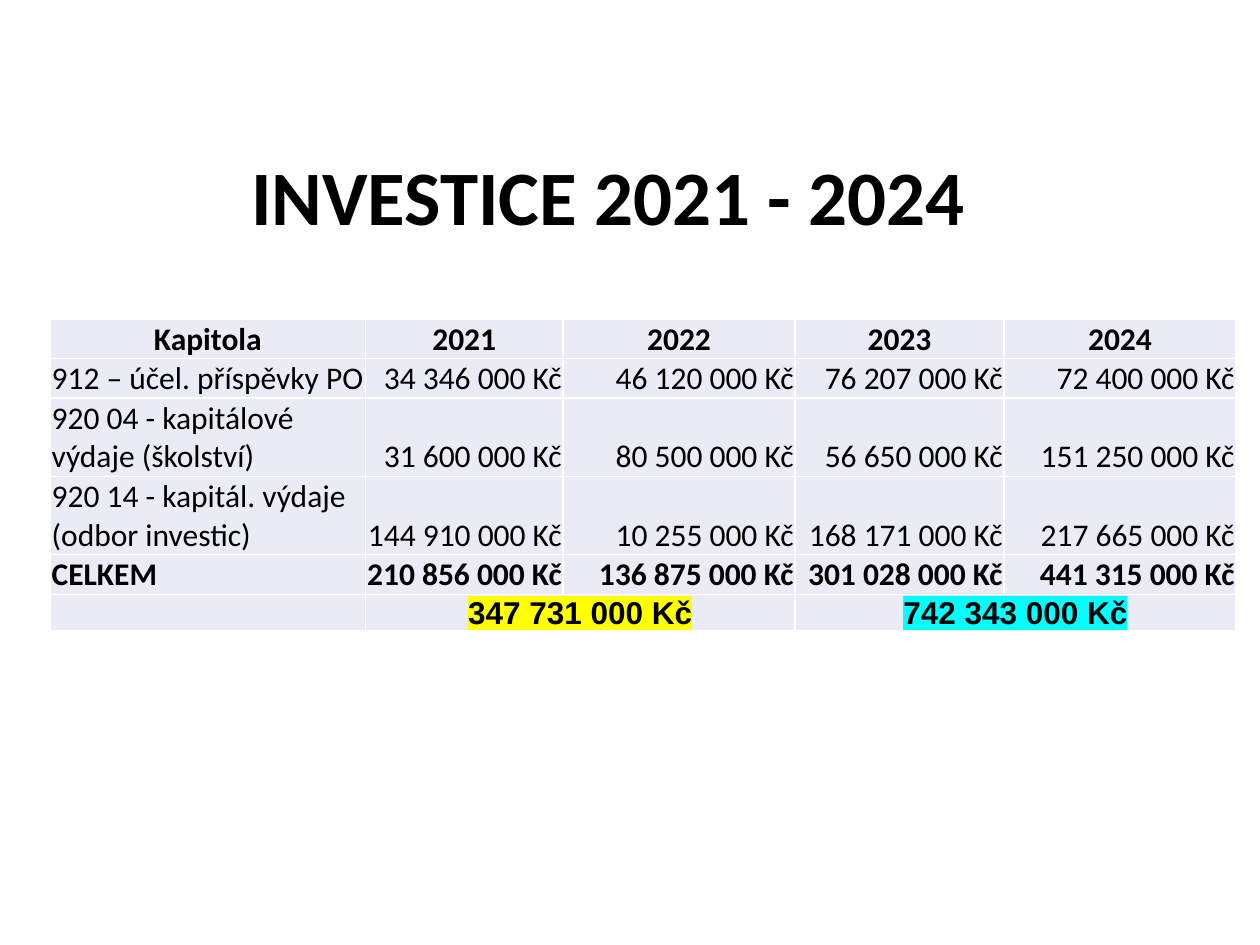
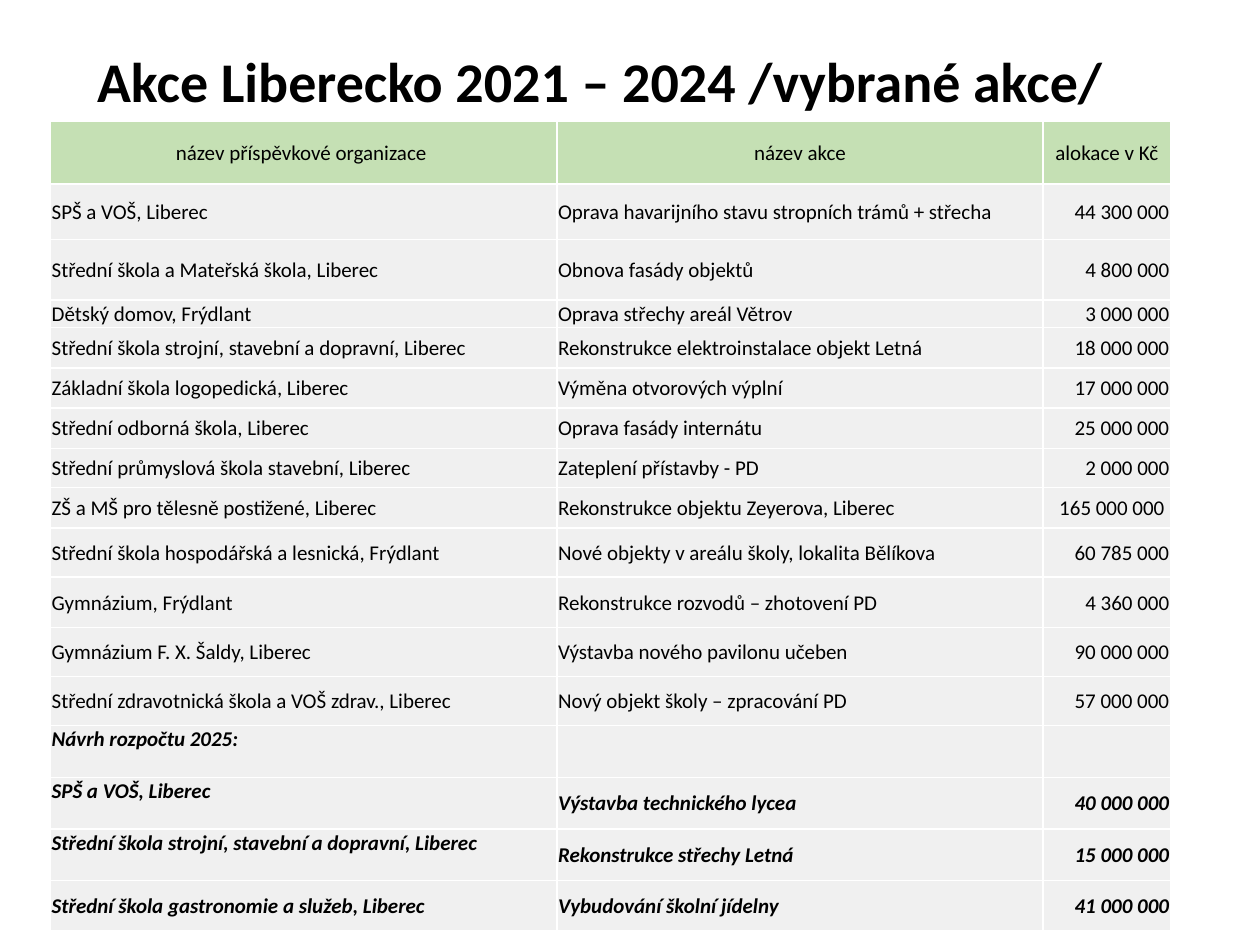
from lxml import etree
from pptx import Presentation
from pptx.dml.color import RGBColor
from pptx.enum.text import MSO_ANCHOR, MSO_AUTO_SIZE, PP_ALIGN
from pptx.oxml.ns import qn
from pptx.util import Inches, Pt

LEFT, CENTER, RIGHT = PP_ALIGN.LEFT, PP_ALIGN.CENTER, PP_ALIGN.RIGHT
TOP, MIDDLE, BOTTOM = MSO_ANCHOR.TOP, MSO_ANCHOR.MIDDLE, MSO_ANCHOR.BOTTOM
NO_AUTOFIT = MSO_AUTO_SIZE.NONE

BLACK, WHITE = "000000", "FFFFFF"
LAVENDER, GREEN, GREY = "E9EBF5", "C5E0B4", "F0F0F0"
YELLOW, CYAN = "FFFF00", "00FFFF"
FONT, SUM_FONT = "Calibri", "Arial"

YEAR_COLS = [2.5, 1.57, 1.84, 1.66, 1.84]
YEAR_ROWS = [0.31, 0.31, 0.62, 0.62, 0.31, 0.28]
INVESTMENTS = [
    ["Kapitola", "2021", "2022", "2023", "2024"],
    ["912 – účel. příspěvky PO", "34 346 000 Kč", "46 120 000 Kč", "76 207 000 Kč", "72 400 000 Kč"],
    ["920 04 - kapitálové výdaje (školství)", "31 600 000 Kč", "80 500 000 Kč", "56 650 000 Kč", "151 250 000 Kč"],
    ["920 14 - kapitál. výdaje (odbor investic)", "144 910 000 Kč", "10 255 000 Kč", "168 171 000 Kč", "217 665 000 Kč"],
    ["CELKEM", "210 856 000 Kč", "136 875 000 Kč", "301 028 000 Kč", "441 315 000 Kč"],
    ["", "", "", "", ""],
]
PERIOD_SUMS = [(1, "347 731 000 Kč", YELLOW), (3, "742 343 000 Kč", CYAN)]

PROJECT_COLS = [4.02, 3.86, 1.01]
PROJECT_ROWS = [0.5, 0.44, 0.48, 0.22, 0.32, 0.32, 0.32, 0.31, 0.32]
PROJECTS = [
    ["název příspěvkové organizace ", "název akce", "alokace v Kč"],
    ["SPŠ a VOŠ, Liberec", "Oprava havarijního stavu stropních trámů + střecha", "44 300 000"],
    ["Střední škola a Mateřská škola, Liberec", "Obnova fasády objektů", "4 800 000"],
    ["Dětský domov, Frýdlant", "Oprava střechy areál Větrov", "3 000 000"],
    ["Střední škola strojní, stavební a dopravní, Liberec", "Rekonstrukce elektroinstalace objekt Letná", "18 000 000"],
    ["Základní škola logopedická, Liberec", "Výměna otvorových výplní", "17 000 000"],
    ["Střední odborná škola, Liberec", "Oprava fasády internátu", "25 000 000"],
    ["Střední průmyslová škola stavební, Liberec", "Zateplení přístavby - PD", "2 000 000"],
    ["ZŠ a MŠ pro tělesně postižené, Liberec", "Rekonstrukce objektu Zeyerova, Liberec", "165 000 000 "],
]
LATER_ROWS = [0.39, 0.4, 0.39, 0.39, 0.41, 0.41, 0.41, 0.4]
LATER_PROJECTS = [
    ["Střední škola hospodářská a lesnická, Frýdlant", "Nové objekty v areálu školy, lokalita Bělíkova", "60 785 000"],
    ["Gymnázium, Frýdlant", "Rekonstrukce rozvodů – zhotovení PD", "4 360 000"],
    ["Gymnázium F. X. Šaldy, Liberec", "Výstavba nového pavilonu učeben", "90 000 000"],
    ["Střední zdravotnická škola a VOŠ zdrav., Liberec", "Nový objekt školy – zpracování PD", "57 000 000"],
    ["Návrh rozpočtu 2025:", "", ""],
    ["SPŠ a VOŠ, Liberec", "Výstavba technického lycea", "40 000 000"],
    ["Střední škola strojní, stavební a dopravní, Liberec", "Rekonstrukce střechy Letná", "15 000 000"],
    ["Střední škola gastronomie a služeb, Liberec", "Vybudování školní jídelny", "41 000 000"],
]


def rgb(value):
    """Return the colour for a hex string."""
    return RGBColor.from_string(value)


def style_run(r, size, bold=False, italic=False, font=FONT):
    """Format one run in black."""
    r.font.size, r.font.name = Pt(size), font
    r.font.bold, r.font.italic = bold, italic
    r.font.color.rgb = rgb(BLACK)


def highlight(r, color):
    """Put a marker colour behind a run."""
    mark = etree.Element(qn("a:highlight"))
    etree.SubElement(mark, qn("a:srgbClr"), val=color)
    r.font._element.find(qn("a:solidFill")).addnext(mark)


def add_borders(cell):
    """Draw white one-point lines around a cell."""
    tc_pr = cell._tc.get_or_add_tcPr()
    for side in ("lnL", "lnR", "lnT", "lnB"):
        line = etree.SubElement(tc_pr, qn("a:" + side), w=str(Pt(1)))
        fill = etree.SubElement(line, qn("a:solidFill"))
        etree.SubElement(fill, qn("a:srgbClr"), val=WHITE)


def fill_cell(cell, text, size, fill, align, anchor, **font):
    """Write and format one table cell."""
    add_borders(cell)
    cell.fill.solid()
    cell.fill.fore_color.rgb = rgb(fill)
    cell.margin_left = cell.margin_right = cell.margin_top = Inches(0.01)
    cell.margin_bottom = 0
    cell.vertical_anchor = anchor
    p = cell.text_frame.paragraphs[0]
    p.text = text
    p.alignment = align
    for r in p.runs:
        style_run(r, size, **font)
    if not text:
        p._p.get_or_add_endParaRPr().set("sz", "1200")


def add_grid(s, left, top, cols, rows, data, cell_style):
    """Add a table whose cells are formatted by cell_style(row, col)."""
    frame = s.shapes.add_table(len(rows), len(cols), Inches(left), Inches(top),
                               Inches(sum(cols)), Inches(sum(rows)))
    table = frame.table
    table.first_row = table.horz_banding = False
    for column, width in zip(table.columns, cols):
        column.width = Inches(width)
    for row, height in zip(table.rows, rows):
        row.height = Inches(height)
    for i, texts in enumerate(data):
        for j, text in enumerate(texts):
            fill_cell(table.cell(i, j), text, **cell_style(i, j))
    return table


def add_title_slide(prs, text, left, top, width, height, size, align):
    """Add a slide with its title moved into the given box."""
    s = prs.slides.add_slide(prs.slide_layouts[5])
    title = s.shapes.title
    title.left, title.top = Inches(left), Inches(top)
    title.width, title.height = Inches(width), Inches(height)
    tf = title.text_frame
    tf.text = text
    tf.word_wrap, tf.auto_size, tf.vertical_anchor = True, NO_AUTOFIT, TOP
    p = tf.paragraphs[0]
    p.alignment = align
    style_run(p.runs[0], size, bold=True)
    return s


def investment_style(i, j):
    """Return the cell format of the yearly investment table."""
    return dict(size=18, fill=LAVENDER, bold=i in (0, 4),
                align=CENTER if i == 0 else RIGHT if j else LEFT,
                anchor=MIDDLE if i == 0 else BOTTOM)


def project_style(i, j):
    """Return the cell format of the project table with its header."""
    return dict(size=12, fill=GREY if i else GREEN, anchor=MIDDLE,
                align=CENTER if i == 0 else RIGHT if j == 2 else LEFT)


def later_style(i, j):
    """Return the cell format of the project table ending in the 2025 draft."""
    draft = i >= 4
    return dict(size=12, fill=GREY, bold=draft, italic=draft,
                align=RIGHT if j == 2 else LEFT,
                anchor=TOP if j == 0 and 4 <= i <= 6 else MIDDLE)


def add_investments(s, left, top):
    """Add the yearly table and its two-year sums."""
    table = add_grid(s, left, top, YEAR_COLS, YEAR_ROWS, INVESTMENTS, investment_style)
    last = len(YEAR_ROWS) - 1
    for col, text, color in PERIOD_SUMS:
        cell = table.cell(last, col)
        cell.merge(table.cell(last, col + 1))
        p = cell.text_frame.paragraphs[0]
        p.text = text
        p.alignment = CENTER
        style_run(p.runs[0], 18, bold=True, font=SUM_FONT)
        highlight(p.runs[0], color)


def add_projects(s, left, top):
    """Add the two project tables, one right below the other."""
    add_grid(s, left, top, PROJECT_COLS, PROJECT_ROWS, PROJECTS, project_style)
    add_grid(s, left, top + sum(PROJECT_ROWS), PROJECT_COLS, LATER_ROWS,
             LATER_PROJECTS, later_style)


def main():
    """Build both slides and save them."""
    prs = Presentation()
    prs.slide_width, prs.slide_height = Inches(10), Inches(7.5)
    s = add_title_slide(prs, "INVESTICE 2021 - 2024", 1.6, 1.13, 6.46, 0.84, 44, CENTER)
    add_investments(s, 0.4, 2.53)
    s = add_title_slide(prs, "Akce Liberecko 2021 – 2024 /vybrané akce/",
                        0.67, 0.32, 8.35, 0.64, 32, LEFT)
    add_projects(s, 0.4, 0.96)
    prs.save("out.pptx")


if __name__ == "__main__":
    main()
